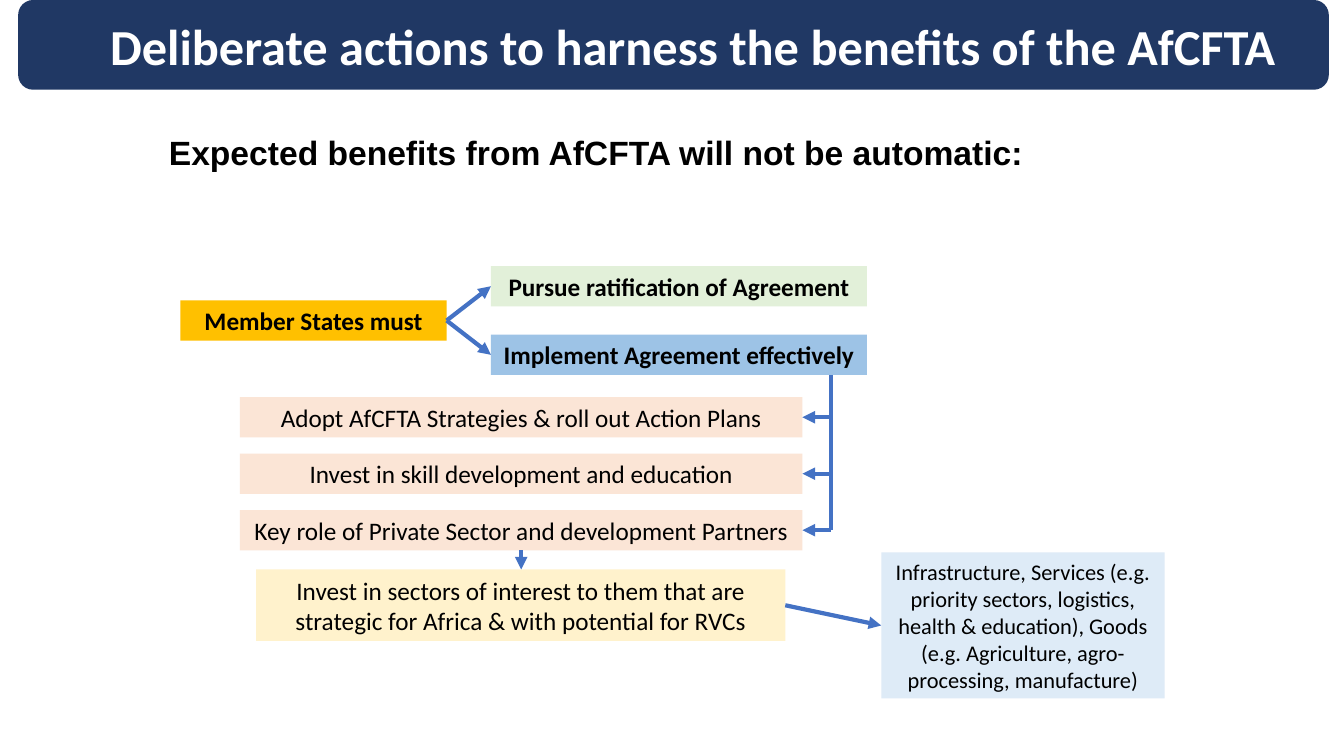
from dataclasses import dataclass
from itertools import pairwise

from lxml import etree
from pptx import Presentation
from pptx.dml.color import RGBColor
from pptx.enum.shapes import MSO_CONNECTOR, MSO_SHAPE
from pptx.enum.text import MSO_ANCHOR, PP_ALIGN
from pptx.oxml.ns import qn
from pptx.util import Inches, Pt

RECTANGLE = MSO_SHAPE.RECTANGLE
ROUNDED = MSO_SHAPE.ROUNDED_RECTANGLE
STRAIGHT = MSO_CONNECTOR.STRAIGHT
CENTER = PP_ALIGN.CENTER
MIDDLE, BOTTOM = MSO_ANCHOR.MIDDLE, MSO_ANCHOR.BOTTOM

SLIDE_WIDTH, SLIDE_HEIGHT = Inches(13.33), Inches(7.5)
COLUMN, ROW = SLIDE_WIDTH / 100, SLIDE_HEIGHT / 100
LINE_BLUE = "4472C4"
BAR = 5.33  # rows in a one-line box

Point = tuple[float, float]


@dataclass(frozen=True)
class Box:
    """A filled box measured in columns and rows of a 100 by 100 grid."""
    text: str
    left: float
    top: float
    width: float
    height: float
    fill: str
    size: int = 18
    bold: bool = False
    ink: str = "000000"
    indent: float = 0

    @property
    def west(self) -> Point:
        return self.left, self.top + self.height / 2

    @property
    def east(self) -> Point:
        return self.left + self.width, self.top + self.height / 2

    @property
    def south(self) -> Point:
        return self.left + self.width / 2, self.top + self.height


def color(hex_value: str) -> RGBColor:
    return RGBColor.from_string(hex_value)


def across(columns: float) -> int:
    return round(columns * COLUMN)


def down(rows: float) -> int:
    return round(rows * ROW)


def write(frame, text: str, ink: str, anchor, **font_values):
    """Fill a text frame with one centred paragraph and return it."""
    frame.word_wrap = True
    frame.vertical_anchor = anchor
    paragraph = frame.paragraphs[0]
    paragraph.alignment = CENTER
    run = paragraph.add_run()
    run.text = text
    for attribute, value in font_values.items():
        setattr(run.font, attribute, value)
    run.font.color.rgb = color(ink)
    return paragraph


def draw_box(slide, box: Box, outline=RECTANGLE) -> None:
    shape = slide.shapes.add_shape(outline, across(box.left), down(box.top),
                                   across(box.width), down(box.height))
    shape.shadow.inherit = False
    shape.fill.solid()
    shape.fill.fore_color.rgb = color(box.fill)
    shape.line.fill.background()
    paragraph = write(shape.text_frame, box.text, box.ink, MIDDLE,
                      name="Calibri", size=Pt(box.size), bold=box.bold)
    if box.indent:
        paragraph._p.get_or_add_pPr().set("marL", str(across(box.indent)))


def draw_line(slide, start: Point, end: Point, arrow: bool = True) -> None:
    connector = slide.shapes.add_connector(
        STRAIGHT, across(start[0]), down(start[1]), across(end[0]), down(end[1]))
    connector.line.color.rgb = color(LINE_BLUE)
    connector.line.width = Pt(3)
    if arrow:
        etree.SubElement(connector.line._get_or_add_ln(), qn("a:tailEnd"),
                         type="triangle")
    etree.SubElement(connector._element.spPr, qn("a:effectLst"))


def draw_heading(slide) -> None:
    heading = slide.shapes.add_textbox(across(3), down(14), across(82.67), down(10))
    heading.text_frame.margin_bottom = Inches(0.09)
    paragraph = write(heading.text_frame,
                      "Expected benefits from AfCFTA will not be automatic:",
                      "000000", BOTTOM, name="Arial", size=Pt(24), bold=True)
    paragraph.line_spacing = 0.9


TITLE = Box("Deliberate actions to harness the benefits of the AfCFTA",
            1.35, 0, 97.52, 11.87, "203864", 36, True, "FFFFFF", indent=2.93)
RATIFY = Box("Pursue ratification of Agreement",
             36.53, 35.2, 27.98, BAR, "E2F0D9", bold=True)
IMPLEMENT = Box("Implement Agreement effectively",
                36.53, 44.27, 27.98, BAR, "9DC3E6", bold=True)
MEMBER_STATES = Box("Member States must", 13.43, (RATIFY.top + IMPLEMENT.top) / 2,
                    19.8, BAR, "FFC000", bold=True)
MEASURES = [
    Box(text, 17.85, 52.53 + 7.47 * index, 41.86, BAR, "FBE5D6")
    for index, text in enumerate((
        "Adopt AfCFTA Strategies & roll out Action Plans",
        "Invest in skill development and education",
        "Key role of Private Sector and development Partners"))
]
SECTORS = Box("Invest in sectors of interest to them that are strategic for Africa "
              "& with potential for RVCs", 19.05, 75.33, 39.38, 9.47, "FFF2CC")
EXAMPLES = Box("Infrastructure, Services (e.g. priority sectors, logistics, health & "
               "education), Goods (e.g. Agriculture, agro-processing, manufacture)",
               65.57, 73.07, 21.08, 19.33, "DEEBF7", 16)
SPINE = 61.82  # column of the line that feeds the measures


def main() -> None:
    presentation = Presentation()
    presentation.slide_width, presentation.slide_height = SLIDE_WIDTH, SLIDE_HEIGHT
    slide = presentation.slides.add_slide(presentation.slide_layouts[6])

    draw_heading(slide)
    for box in (RATIFY, IMPLEMENT, MEMBER_STATES, *MEASURES, SECTORS, EXAMPLES):
        draw_box(slide, box)

    for duty in (RATIFY, IMPLEMENT):
        draw_line(slide, MEMBER_STATES.east, duty.west)
    for measure in MEASURES:
        draw_line(slide, (SPINE, measure.east[1]), measure.east)
    spine_rows = [IMPLEMENT.south[1], *(measure.east[1] for measure in MEASURES)]
    for upper, lower in pairwise(spine_rows):
        draw_line(slide, (SPINE, upper), (SPINE, lower), arrow=False)
    partners_exit = MEASURES[-1].south
    draw_line(slide, partners_exit, (partners_exit[0], SECTORS.top))
    draw_line(slide, SECTORS.east, EXAMPLES.west)

    draw_box(slide, TITLE, ROUNDED)
    presentation.save("out.pptx")


if __name__ == "__main__":
    main()
